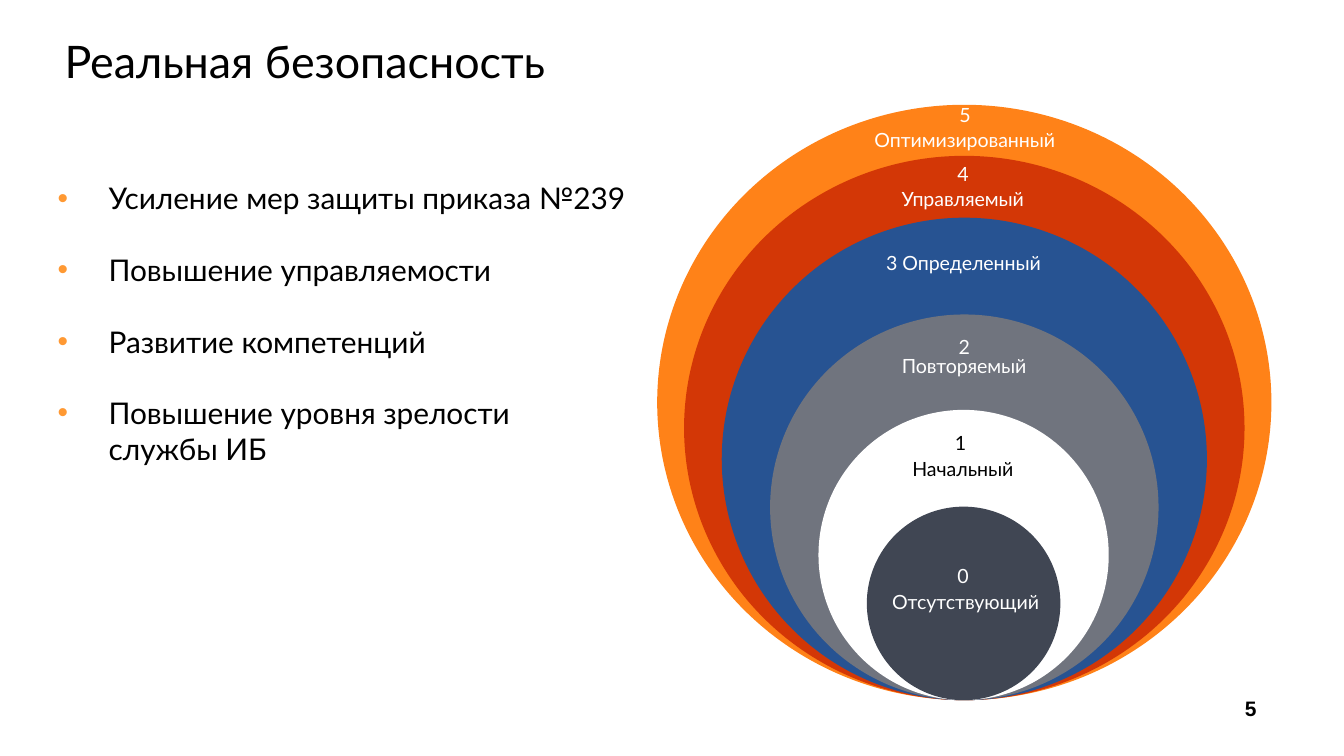
from dataclasses import dataclass

from lxml import etree
from pptx import Presentation
from pptx import util as u
from pptx.dml.color import RGBColor
from pptx.enum import shapes, text
from pptx.oxml.ns import qn

PX = 9144  # EMU per px, 100 px to the inch
PAGE_WIDTH = 1000
CENTRE_X, BASE_Y = 717, 521  # all rings stand on one point
INDENT = 38

COLOURS = {
    "black": "000000", "white": "FFFFFF", "bullet": "FF9933",
    "optimised": "FF8218", "managed": "D33706", "defined": "275392",
    "repeatable": "70747E", "initial": "FFFFFF", "absent": "404653",
}
TITLE_FONT = {"name": "Lato", "size": u.Pt(24)}
LIST_FONT = {"name": "Lato", "size": u.Pt(16)}
LABEL_FONT = {"name": "Lato", "size": u.Pt(10.5)}
NUMBER_FONT = {"name": "Arial", "size": u.Pt(11.2), "bold": True}

PLAIN = {"word_wrap": True}
GROWING = {"word_wrap": True, "auto_size": text.MSO_AUTO_SIZE.SHAPE_TO_FIT_TEXT}
UNWRAPPED = {**GROWING, "word_wrap": False}
TITLE_FRAME = {**GROWING, "margin_left": 0}
LABEL_FRAME = {
    **PLAIN, "vertical_anchor": text.MSO_ANCHOR.MIDDLE,
    **{f"margin_{side}": 9 * PX for side in ("left", "top", "right", "bottom")},
}

CENTRED = {"alignment": text.PP_ALIGN.CENTER}
LABEL_PARA = {**CENTRED, "line_spacing": u.Pt(10), "space_after": u.Pt(3.7)}
TITLE_PARA = {"line_spacing": 0.9}
LIST_PARA = {"space_after": u.Pt(19.2)}


@dataclass(frozen=True)
class Area:
    left: int
    top: int
    width: int
    height: int

    def emu(self) -> list[int]:
        return [n * PX for n in (self.left, self.top, self.width, self.height)]


@dataclass(frozen=True)
class Level:
    colour: str
    width: int
    height: int
    label_area: Area
    lines: tuple[str, ...]
    frame: dict
    ink: str = "white"


LEVELS = (
    Level("optimised", 457, 443, Area(640, 75, 156, 44),
          ("5", "Оптимизированный"), UNWRAPPED),
    Level("managed", 417, 405, Area(660, 119, 113, 40),
          ("4", "Управляемый"), UNWRAPPED),
    Level("defined", 361, 359, Area(650, 170, 134, 54),
          ("3 Определенный",), LABEL_FRAME),
    Level("repeatable", 289, 287, Area(656, 241, 123, 52),
          ("2 Повторяемый",), LABEL_FRAME),
    Level("initial", 216, 216, Area(666, 317, 101, 48),
          ("1 ", "Начальный"), LABEL_FRAME, "black"),
    Level("absent", 144, 144, Area(652, 404, 133, 72),
          ("0 ", "Отсутствующий"), LABEL_FRAME),
)
MEASURES = (
    "Усиление мер защиты приказа №239",
    "Повышение управляемости",
    "Развитие компетенций",
    "Повышение уровня зрелости \vслужбы ИБ",
)


def rgb(name: str) -> RGBColor:
    return RGBColor.from_string(COLOURS[name])


def apply(target, values: dict) -> None:
    for name, value in values.items():
        setattr(target, name, value)


def add_bullet(para) -> None:
    """Give the paragraph a coloured bullet with a hanging indent."""
    props = para._p.get_or_add_pPr()
    props.set("marL", str(INDENT * PX))
    props.set("indent", str(-INDENT * PX))
    colour = etree.SubElement(props, qn("a:buClr"))
    etree.SubElement(colour, qn("a:srgbClr"), val=COLOURS["bullet"])
    etree.SubElement(props, qn("a:buFont"), typeface="Arial")
    etree.SubElement(props, qn("a:buChar"), char="•")


def add_text(page, area: Area, lines: tuple[str, ...], frame: dict, para_format: dict,
             font: dict, ink: str = "black", bulleted: bool = False) -> None:
    body = page.shapes.add_textbox(*area.emu()).text_frame
    apply(body, frame)
    body.text = "\n".join(lines)
    for para in body.paragraphs:
        if bulleted:
            add_bullet(para)
        apply(para, para_format)
        for span in para.runs:
            apply(span.font, font)
            span.font.color.rgb = rgb(ink)


def add_level(page, level: Level) -> None:
    area = Area(CENTRE_X - level.width // 2, BASE_Y - level.height,
                level.width, level.height)
    ring = page.shapes.add_shape(shapes.MSO_SHAPE.OVAL, *area.emu())
    ring.shadow.inherit = False
    ring.fill.solid()
    ring.fill.fore_color.rgb = rgb(level.colour)
    ring.line.fill.background()
    add_text(page, level.label_area, level.lines, level.frame, LABEL_PARA,
             LABEL_FONT, level.ink)


def main() -> None:
    deck = Presentation()
    deck.slide_width = PAGE_WIDTH * PX
    deck.slide_height = deck.slide_width * 9 // 16
    page = deck.slides.add_slide(deck.slide_layouts[6])

    add_text(page, Area(911, 513, 39, 29), ("5",), UNWRAPPED, CENTRED, NUMBER_FONT)
    add_text(page, Area(48, 25, 899, 47), ("Реальная безопасность",),
             TITLE_FRAME, TITLE_PARA, TITLE_FONT)
    for level in LEVELS:
        add_level(page, level)
    add_text(page, Area(33, 129, 452, 276), MEASURES, GROWING, LIST_PARA,
             LIST_FONT, bulleted=True)

    deck.save("out.pptx")


if __name__ == "__main__":
    main()
